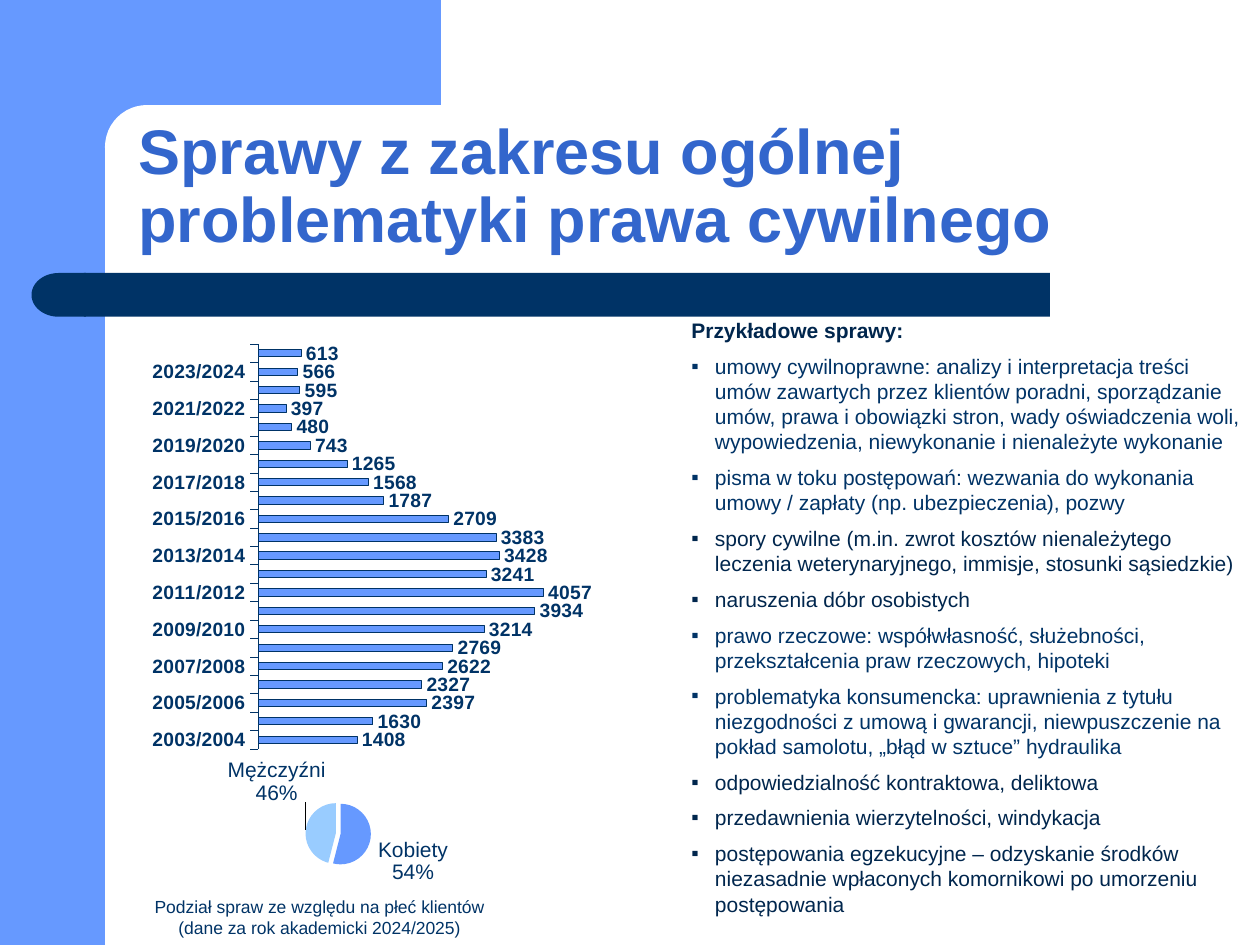
from copy import deepcopy

from lxml import etree
from pptx import Presentation
from pptx.chart.data import CategoryChartData
from pptx.dml.color import RGBColor
from pptx.enum.chart import XL_CHART_TYPE, XL_LABEL_POSITION, XL_TICK_MARK
from pptx.enum.shapes import MSO_SHAPE
from pptx.enum.text import MSO_ANCHOR, PP_ALIGN
from pptx.oxml import parse_xml
from pptx.oxml.ns import nsdecls, qn
from pptx.util import Pt

OUTSIDE_END = XL_LABEL_POSITION.OUTSIDE_END
FONT = "Arial"
BLUE, LIGHT_BLUE, NAVY, DARK_NAVY = "6699FF", "99CCFF", "003366", "00264D"
TITLE_BLUE, WHITE = "3366CC", "FFFFFF"

TITLE = "Sprawy z zakresu ogólnej problematyki prawa cywilnego"
HEADING = "Przykładowe sprawy:"
EXAMPLES = [
    ("umowy cywilnoprawne: analizy i interpretacja treści umów zawartych przez klientów "
     "poradni, sporządzanie umów, prawa i obowiązki stron, wady oświadczenia woli, "
     "wypowiedzenia, niewykonanie i nienależyte wykonanie", NAVY),
    ("pisma w toku postępowań: wezwania do wykonania umowy / zapłaty "
     "(np. ubezpieczenia), pozwy", NAVY),
    ("spory cywilne (m.in. zwrot kosztów nienależytego leczenia weterynaryjnego, "
     "immisje, stosunki sąsiedzkie)", DARK_NAVY),
    ("naruszenia dóbr osobistych", DARK_NAVY),
    ("prawo rzeczowe: współwłasność, służebności, przekształcenia praw rzeczowych, "
     "hipoteki", NAVY),
    ("problematyka konsumencka: uprawnienia z tytułu niezgodności z umową i gwarancji, "
     "niewpuszczenie na pokład samolotu, „błąd w sztuce” hydraulika", NAVY),
    ("odpowiedzialność kontraktowa, deliktowa", DARK_NAVY),
    ("przedawnienia wierzytelności, windykacja", DARK_NAVY),
    ("postępowania egzekucyjne – odzyskanie środków niezasadnie wpłaconych "
     "komornikowi po umorzeniu postępowania", DARK_NAVY),
]
CAPTION = "Podział spraw ze względu na płeć klientów (dane za rok akademicki 2024/2025)"
FIRST_YEAR = 2003
CASES = [1408, 1630, 2397, 2327, 2622, 2769, 3214, 3934, 4057, 3241, 3428,
         3383, 2709, 1787, 1568, 1265, 743, 480, 397, 595, 566, 613]
CLIENTS = {"Kobiety": (54, BLUE), "Mężczyźni": (46, LIGHT_BLUE)}

# preset, left, top, width, height, colour
BACKDROP = [
    (MSO_SHAPE.RECTANGLE, 0, 0, 60, 540, BLUE),
    (MSO_SHAPE.RECTANGLE, 54, 0, 198, 84, BLUE),
    (MSO_SHAPE.ROUNDED_RECTANGLE, 60, 60, 402, 48, WHITE),
    (MSO_SHAPE.RECTANGLE, 48, 156, 552, 25, NAVY),
]
BAR_CAP = (MSO_SHAPE.FLOWCHART_DELAY, 18, 156, 31, 25, NAVY)


def color(value):
    return RGBColor.from_string(value)


def style_font(font, size, value, bold=False):
    font.name, font.size, font.bold = FONT, Pt(size), bold
    font.color.rgb = color(value)


def add_block(slide, preset, left, top, width, height, fill):
    shape = slide.shapes.add_shape(preset, Pt(left), Pt(top), Pt(width), Pt(height))
    shape.shadow.inherit = False
    shape.fill.solid()
    shape.fill.fore_color.rgb = color(fill)
    shape.line.fill.background()
    return shape


def add_text(slide, left, top, width, height, text, size, value, bold=False):
    box = slide.shapes.add_textbox(Pt(left), Pt(top), Pt(width), Pt(height))
    frame = box.text_frame
    frame.word_wrap = True
    frame.text = text
    style_font(frame.paragraphs[0].runs[0].font, size, value, bold)
    return frame


def add_bullet(frame, text, size, value):
    paragraph = frame.add_paragraph()
    paragraph.text = text
    properties = paragraph._p.get_or_add_pPr()
    properties.set("marL", str(Pt(13.5)))
    properties.set("indent", str(-Pt(13.5)))
    etree.SubElement(properties, qn("a:buFont"), typeface=FONT)
    etree.SubElement(properties, qn("a:buChar"), char="▪")
    paragraph.space_before = Pt(6)
    style_font(paragraph.runs[0].font, size, value)


def add_chart(slide, kind, left, top, width, height, categories, values):
    data = CategoryChartData()
    data.categories = categories
    data.add_series("Series 1", values)
    chart = slide.shapes.add_chart(
        kind, Pt(left), Pt(top), Pt(width), Pt(height), data).chart
    chart.has_legend = chart.has_title = False
    style_font(chart.font, 11, NAVY)
    return chart


def manual_layout(parts):
    body = "".join(f'<c:{name} val="{value}"/>' for name, value in parts.items())
    return parse_xml(f'<c:layout {nsdecls("c")}><c:manualLayout>{body}'
                     '</c:manualLayout></c:layout>')


def place_plot(chart, x, y, w, h):
    plot_area = chart._chartSpace.chart.plotArea
    for layout in plot_area.findall(qn("c:layout")):
        plot_area.remove(layout)
    plot_area.insert(0, manual_layout(dict(
        layoutTarget="inner", xMode="edge", yMode="edge", x=x, y=y, w=w, h=h)))


def add_cases_chart(slide):
    years = [f"{FIRST_YEAR + i}/{FIRST_YEAR + i + 1}" for i in range(len(CASES))]
    chart = add_chart(slide, XL_CHART_TYPE.BAR_CLUSTERED, 60, 175, 312, 269, years, CASES)
    place_plot(chart, 0.28, 0.08, 0.58, 0.86)
    axis = chart.category_axis
    axis.major_tick_mark = XL_TICK_MARK.OUTSIDE
    style_font(axis.tick_labels.font, 11, NAVY, True)
    axis.format.line.color.rgb = color(NAVY)
    axis.format.line.width = Pt(0.15)
    value_axis = chart.value_axis
    value_axis.visible = value_axis.has_major_gridlines = False
    value_axis.minimum_scale, value_axis.maximum_scale = 0, 4500
    plot = chart.plots[0]
    plot.gap_width, plot.vary_by_categories = 150, False
    series = plot.series[0]
    series.format.fill.solid()
    series.format.fill.fore_color.rgb = color(BLUE)
    series.format.line.color.rgb = color(NAVY)
    series.format.line.width = Pt(0.25)
    labels = series.data_labels
    labels.show_value, labels.position = True, OUTSIDE_END
    style_font(labels.font, 11, NAVY, True)


def move_label(labels, index, x, y):
    """Shift one point's label by fractions of the chart, keeping the shared settings."""
    label = etree.Element(qn("c:dLbl"))
    etree.SubElement(label, qn("c:idx"), val=str(index))
    label.append(manual_layout(dict(x=x, y=y)))
    for child in labels:
        if child.tag != qn("c:showLeaderLines"):
            label.append(deepcopy(child))
    labels.insert(0, label)


def add_clients_chart(slide):
    shares = [share for share, _ in CLIENTS.values()]
    chart = add_chart(slide, XL_CHART_TYPE.PIE, 29.5, 434, 312, 85, list(CLIENTS), shares)
    place_plot(chart, 0.46, 0.28, 0.13, 0.44)
    series = chart.plots[0].series[0]
    for index, (_, fill) in enumerate(CLIENTS.values()):
        slice_fill = series.points[index].format.fill
        slice_fill.solid()
        slice_fill.fore_color.rgb = color(fill)
    explosion = etree.Element(qn("c:explosion"), val="8")
    series._element.find(qn("c:dPt")).addprevious(explosion)
    labels = series.data_labels
    labels.show_value = False
    labels.show_category_name = labels.show_percentage = True
    labels.number_format, labels.number_format_is_linked = "0%", False
    labels.position = OUTSIDE_END
    style_font(labels.font, 12, NAVY)
    element = labels._element
    separator = etree.Element(qn("c:separator"))
    separator.text = "\n"
    element.find(qn("c:showBubbleSize")).addnext(separator)
    move_label(element, 1, 0.05, -0.18)


def main():
    presentation = Presentation()
    presentation.slide_width, presentation.slide_height = Pt(720), Pt(540)
    slide = presentation.slides.add_slide(presentation.slide_layouts[6])
    blocks = [add_block(slide, *block) for block in BACKDROP]
    blocks[2].adjustments[0] = 0.5
    add_block(slide, *BAR_CAP).rotation = 180

    title = add_text(slide, 72, 60, 630, 90, TITLE, 36, TITLE_BLUE, True)
    title.vertical_anchor = MSO_ANCHOR.BOTTOM
    title.paragraphs[0].line_spacing = 0.9
    examples = add_text(slide, 388, 178, 332, 363, HEADING, 12, DARK_NAVY, True)
    for text, value in EXAMPLES:
        add_bullet(examples, text, 12, value)

    add_cases_chart(slide)
    add_clients_chart(slide)
    caption = add_text(slide, 70.5, 508.5, 224, 31.5, CAPTION, 10, NAVY)
    caption.paragraphs[0].alignment = PP_ALIGN.CENTER
    presentation.save("out.pptx")


if __name__ == "__main__":
    main()
